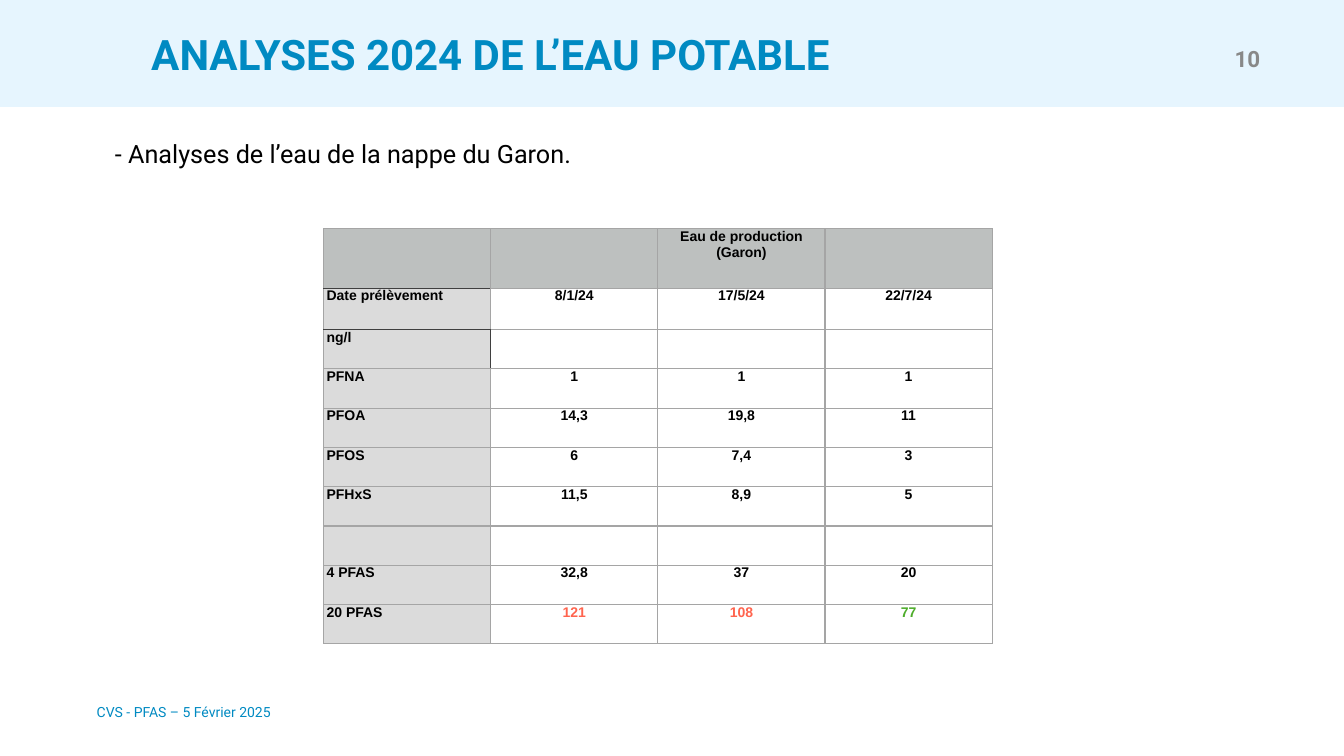
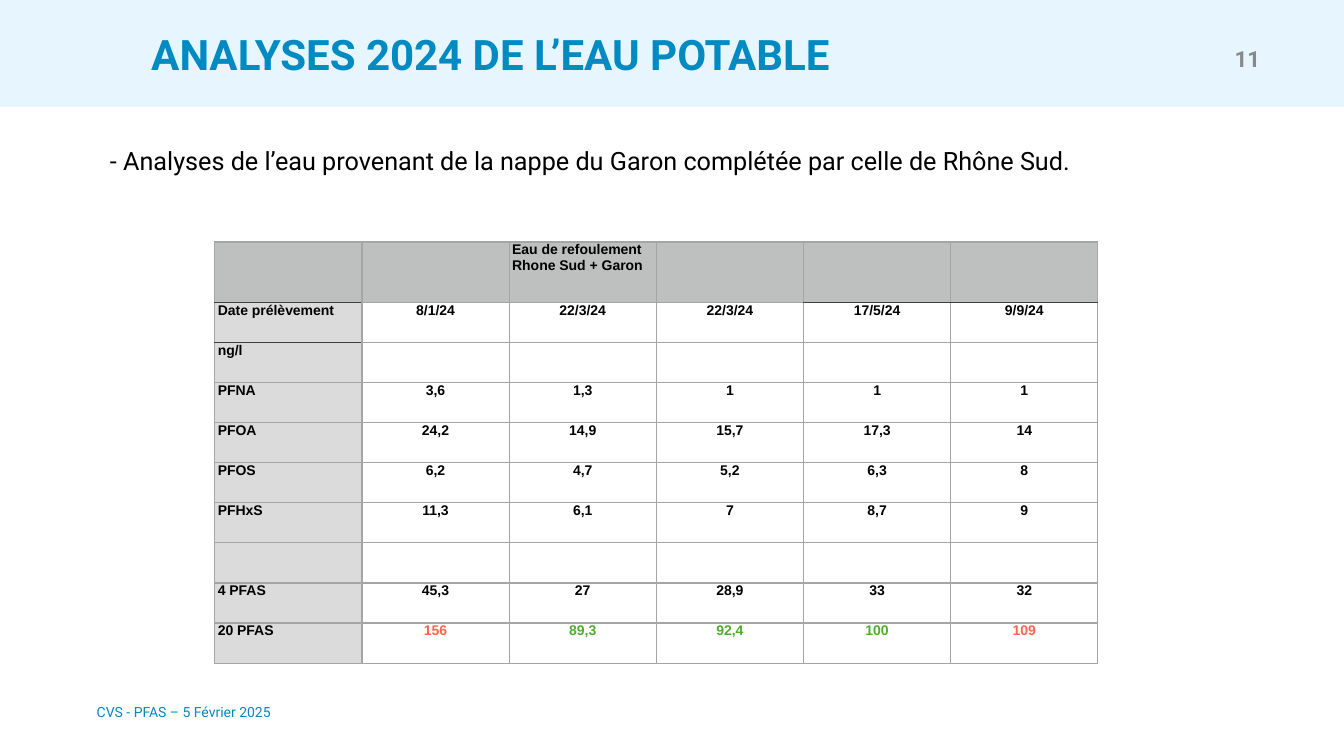
from lxml import etree
from pptx import Presentation
from pptx import util as u
from pptx.dml import color
from pptx.enum import shapes, text
from pptx.oxml import ns

HUES = {
    "band": "E6F5FE", "blue": "008AC2", "page": "888888", "ink": "000000",
    "head": "BDC0BF", "side": "DBDBDB", "cell": "FFFFFF",
    "grid": "A5A5A5", "dark": "3F3F3F", "high": "FF644E", "low": "4EAD2B",
}
LEFT, MID, RIGHT = text.PP_ALIGN.LEFT, text.PP_ALIGN.CENTER, text.PP_ALIGN.RIGHT
TOP, CENTER = text.MSO_ANCHOR.TOP, text.MSO_ANCHOR.MIDDLE
LIMIT = 100
LABELS = ["Date prélèvement", "ng/l", "PFNA", "PFOA", "PFOS", "PFHxS", "", "4 PFAS", "20 PFAS"]


def rgb(name):
    """Return the named colour."""
    return color.RGBColor.from_string(HUES[name])


def style(para, size, hue, bold=False, face="Roboto", align=LEFT):
    """Format one paragraph."""
    para.alignment = align
    font = para.font
    font.name, font.size, font.bold = face, u.Pt(size), bold
    font.color.rgb = rgb(hue)


def write(shape, box, words, size, hue, bold=False, align=LEFT, anchor=TOP, wrap=True, pad=0):
    """Place a text shape in its box and fill it."""
    shape.left, shape.top, shape.width, shape.height = (u.Inches(n) for n in box)
    frame = shape.text_frame
    frame.text = words
    frame.auto_size = text.MSO_AUTO_SIZE.NONE
    frame.word_wrap, frame.vertical_anchor = wrap, anchor
    frame.margin_left = frame.margin_right = u.Inches(pad)
    frame.margin_top = frame.margin_bottom = u.Inches(pad)
    style(frame.paragraphs[0], size, hue, bold, align=align)


def label(slide, box, *args, **opts):
    """Add a text box."""
    write(slide.shapes.add_textbox(0, 0, 0, 0), box, *args, **opts)


def add_band(slide, width):
    """Put the top band behind every slide of this layout."""
    band = slide.shapes.add_shape(shapes.MSO_SHAPE.RECTANGLE, 0, 0, width, u.Inches(1.06))
    band.shadow.inherit = False
    band.fill.solid()
    band.fill.fore_color.rgb = rgb("band")
    band.line.fill.background()
    slide.slide_layout.shapes.element.insert(2, band.element)


def add_frame(slide, page):
    """Add the title, page number and footer."""
    write(slide.shapes.title, (1.5, 0.28, 7.4, 0.5), "ANALYSES 2024 DE L’EAU POTABLE",
          30, "blue", bold=True, wrap=False)
    label(slide, (12.19, 0.4, 0.36, 0.36), str(page), 16, "page", bold=True,
          align=RIGHT, anchor=CENTER, wrap=False, pad=0.05)
    label(slide, (0.96, 6.98, 5.43, 0.17), "CVS - PFAS – 5 Février 2025", 10, "blue", anchor=CENTER)


def edge(cell, side, hue):
    """Draw one border of a cell."""
    line = etree.SubElement(cell._tc.get_or_add_tcPr(), ns.qn("a:ln" + side), w=str(u.Pt(1)))
    fill = etree.SubElement(line, ns.qn("a:solidFill"))
    etree.SubElement(fill, ns.qn("a:srgbClr"), val=HUES[hue])


def add_grid(slide, box, tops, head, align, data, below, right=()):
    """Fill a table of samples, with dark edges below or right of some cells."""
    left, top, width, height = box
    count = len(data[0])
    rows = [[""] * 2 + [head] + [""] * (count - 2)]
    rows += [[name, *vals] for name, vals in zip(LABELS, data)]
    table = slide.shapes.add_table(len(rows), count + 1, *(u.Inches(n) for n in box)).table
    table.first_row = table.horz_banding = False
    for col in table.columns:
        col.width = u.Inches(width / (count + 1))
    rest = (height - sum(tops)) / (len(rows) - len(tops))
    for r, row in enumerate(rows):
        table.rows[r].height = u.Inches(tops[r] if r < len(tops) else rest)
        for c, words in enumerate(row):
            cell = table.cell(r, c)
            sides = {"L": (r, c - 1) in right, "R": (r, c) in right,
                     "T": (r - 1, c) in below, "B": (r, c) in below}
            for side, dark in sides.items():
                edge(cell, side, "dark" if dark else "grid")
            cell.fill.solid()
            cell.fill.fore_color.rgb = rgb("head" if r == 0 else "cell" if c else "side")
            cell.margin_left = cell.margin_right = cell.margin_bottom = u.Inches(0.03)
            cell.margin_top = 0
            cell.text = words
            hue = "ink"
            if c and r == len(rows) - 1:
                hue = "high" if float(words.replace(",", ".")) > LIMIT else "low"
            place = align if r == 0 else MID if c else LEFT
            style(cell.text_frame.paragraphs[0], 10, hue, True, "Arial", place)


def add_garon(slide):
    """Show the groundwater samples."""
    label(slide, (1.14, 1.37, 10.77, 0.31), "- Analyses de l’eau de la nappe du Garon.", 18, "ink")
    data = [
        ["8/1/24", "17/5/24", "22/7/24"],
        [""] * 3,
        ["1", "1", "1"],
        ["14,3", "19,8", "11"],
        ["6", "7,4", "3"],
        ["11,5", "8,9", "5"],
        [""] * 3,
        ["32,8", "37", "20"],
        ["121", "108", "77"],
    ]
    add_grid(slide, (3.21, 2.27, 6.63, 4.12), [0.59, 0.41], "Eau de production (Garon)", MID,
             data, {(0, 0), (1, 0)}, {(2, 0)})


def add_mixed(slide):
    """Show the samples of mixed water."""
    label(slide, (1.09, 1.44, 11.38, 0.31),
          "- Analyses de l’eau provenant de la nappe du Garon complétée par celle de Rhône Sud.",
          18, "ink")
    data = [
        ["8/1/24", "22/3/24", "22/3/24", "17/5/24", "9/9/24"],
        [""] * 5,
        ["3,6", "1,3", "1", "1", "1"],
        ["24,2", "14,9", "15,7", "17,3", "14"],
        ["6,2", "4,7", "5,2", "6,3", "8"],
        ["11,3", "6,1", "7", "8,7", "9"],
        [""] * 5,
        ["45,3", "27", "28,9", "33", "32"],
        ["156", "89,3", "92,4", "100", "109"],
    ]
    add_grid(slide, (2.13, 2.4, 8.76, 4.18), [0.6], "Eau de refoulement Rhone Sud + Garon", LEFT,
             data, {(0, 0), (1, 0), (0, 4), (0, 5)})


def main():
    """Build and save the slides."""
    deck = Presentation()
    deck.slide_width, deck.slide_height = u.Inches(13.33), u.Inches(7.5)
    for page, fill in enumerate((add_garon, add_mixed), 10):
        slide = deck.slides.add_slide(deck.slide_layouts[5])
        add_frame(slide, page)
        fill(slide)
    add_band(slide, deck.slide_width)
    deck.save("out.pptx")


if __name__ == "__main__":
    main()
